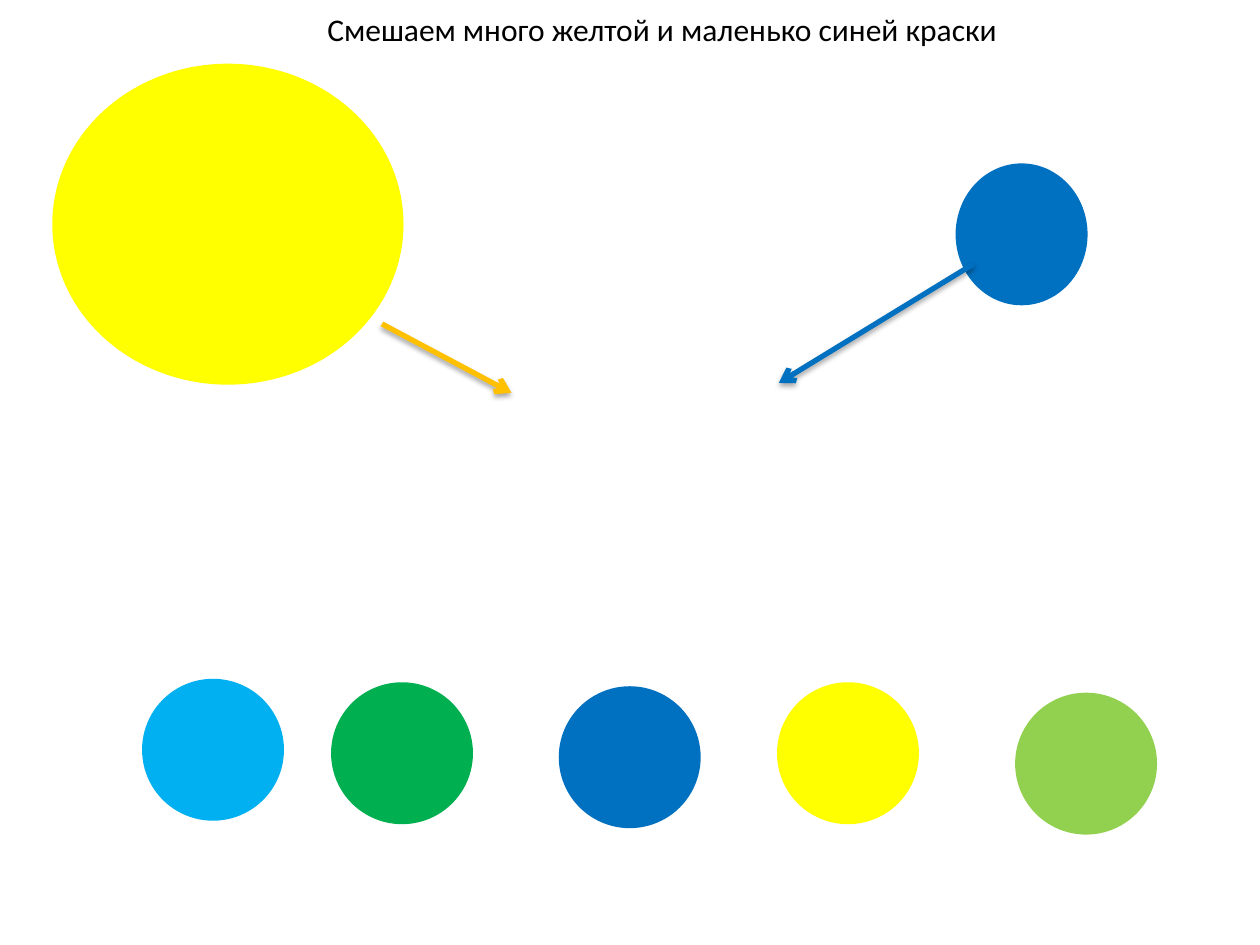
import pptx
import pptx.dml.color
import pptx.enum.shapes
import pptx.enum.text
import pptx.oxml
import pptx.oxml.ns
import pptx.util
from pptx.util import Cm

COLORS = {
    "yellow": "FFFF00",
    "blue": "0070C0",
    "orange": "FFC000",
    "sky": "00B0F0",
    "green": "00B050",
    "lime": "92D050",
    "black": "000000",
}


def rgb(name):
    """Return the named colour."""
    return pptx.dml.color.RGBColor.from_string(COLORS[name])


def apply_format(obj, values):
    """Set attributes of an object from a dict."""
    for name, value in values.items():
        setattr(obj, name, value)


def add_paint(s, x, y, w, h, color):
    """Add a spot of paint."""
    sp = s.shapes.add_shape(
        pptx.enum.shapes.MSO_SHAPE.OVAL, Cm(x), Cm(y), Cm(w), Cm(h))
    sp.shadow.inherit = False
    sp.fill.solid()
    sp.fill.fore_color.rgb = rgb(color)
    sp.line.color.rgb = rgb(color)
    sp.line.width = pptx.util.Pt(2)


def add_arrow(s, x1, y1, x2, y2, color):
    """Add an arrow with a soft shadow below it."""
    sp = s.shapes.add_connector(
        pptx.enum.shapes.MSO_CONNECTOR.STRAIGHT, Cm(x1), Cm(y1), Cm(x2), Cm(y2))
    sp.line.color.rgb = rgb(color)
    sp.line.width = pptx.util.Pt(3)
    ns = pptx.oxml.ns.nsdecls("a")
    sp.line._get_or_add_ln().append(
        pptx.oxml.parse_xml(f'<a:tailEnd {ns} type="arrow"/>'))
    sp._element.spPr.append(pptx.oxml.parse_xml(
        f'<a:effectLst {ns}><a:outerShdw blurRad="{pptx.util.Pt(3.1)}" '
        f'dist="{pptx.util.Pt(1.8)}" dir="5400000" rotWithShape="0">'
        f'<a:srgbClr val="{COLORS["black"]}"><a:alpha val="35000"/></a:srgbClr>'
        '</a:outerShdw></a:effectLst>'))


def add_mix(s, x, y):
    """Add the two paints to mix and their arrows."""
    add_paint(s, x, y, 7.01, 6.4, "yellow")
    add_paint(s, x + 18.21, y + 2.01, 2.59, 2.79, "blue")
    add_arrow(s, x + 6.61, y + 5.21, x + 9.22, y + 6.6, "orange")
    add_arrow(s, x + 18.52, y + 4.01, x + 14.61, y + 6.4, "blue")


def add_choices(s, x, y, size):
    """Add the row of possible answers."""
    choices = [
        (0, 0, "sky"),
        (3.81, 0.07, "green"),
        (8.4, 0.15, "blue"),
        (12.8, 0.07, "yellow"),
        (17.6, 0.28, "lime"),
    ]
    for dx, dy, color in choices:
        add_paint(s, x + dx, y + dy, size, size, color)


def add_title(s, x, y, w, h):
    """Add the task text."""
    tf = s.shapes.add_textbox(Cm(x), Cm(y), Cm(w), Cm(h)).text_frame
    apply_format(tf, {
        "word_wrap": False,
        "auto_size": pptx.enum.text.MSO_AUTO_SIZE.SHAPE_TO_FIT_TEXT,
    })
    r = tf.paragraphs[0].add_run()
    r.text = "Смешаем много желтой и маленько синей краски"
    apply_format(r.font, {"name": "Calibri", "size": pptx.util.Pt(18)})
    r.font.color.rgb = rgb("black")


def main():
    """Build the slide and save it."""
    prs = pptx.Presentation()
    apply_format(prs, {"slide_width": Cm(25.4), "slide_height": Cm(19.05)})
    s = prs.slides.add_slide(prs.slide_layouts[6])
    add_mix(s, 1.09, 1.32)
    add_choices(s, 2.9, 13.72, 2.79)
    add_title(s, 6.35, 0.08, 14.27, 1.02)
    prs.save("out.pptx")


if __name__ == "__main__":
    main()
